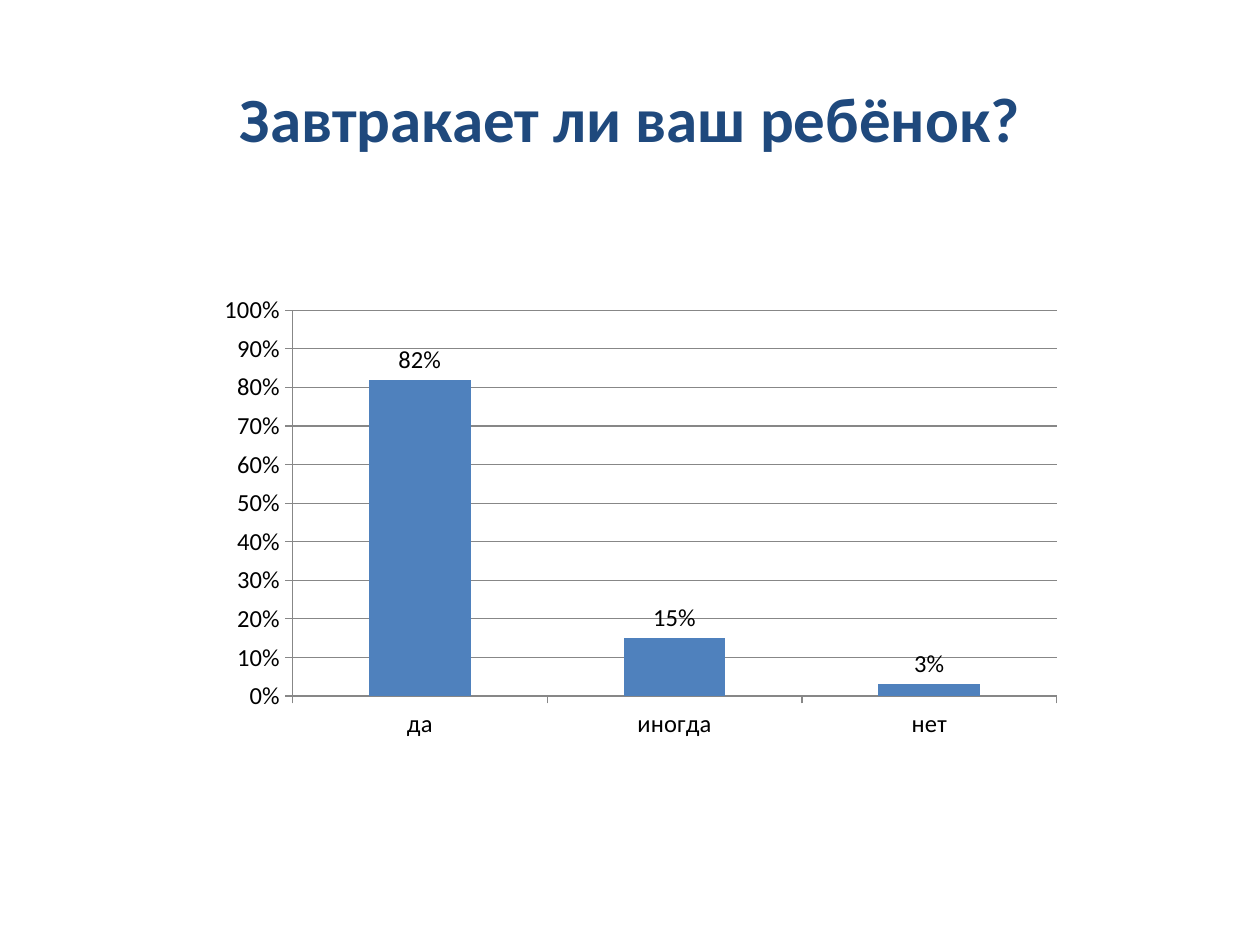
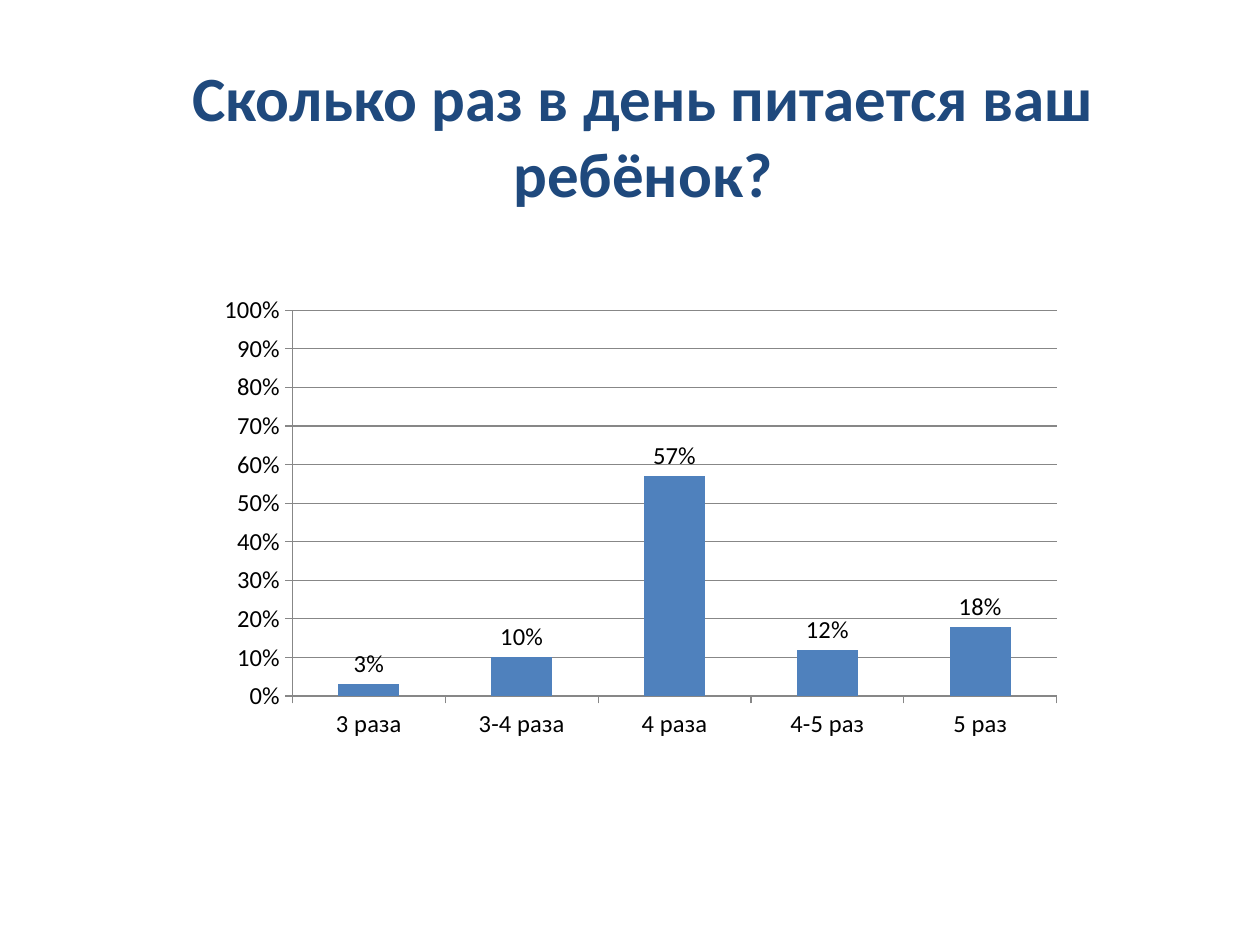
import pptx
import pptx.chart.data
import pptx.dml.color
import pptx.enum.chart
import pptx.enum.text
import pptx.util

HUES = {"title": "1F497D", "bar": "4F81BD", "line": "878787", "text": "000000"}
FACE = "Calibri"
WIDE, HIGH = 1260, 945
SCALE = 914400 / 126


def size(px):
    """Turn px into EMU."""
    return pptx.util.Emu(round(px * SCALE))


class Deck:
    """Hold the style and the current slide."""

    def __init__(self):
        """Start an empty deck."""
        self.file = pptx.Presentation()
        self.file.slide_width, self.file.slide_height = size(WIDE), size(HIGH)
        self.slide = None

    def hue(self, name):
        """Look up a colour."""
        return pptx.dml.color.RGBColor.from_string(HUES[name])

    def style(self, font, points, hue, bold=False):
        """Format a font."""
        font.name = FACE
        font.size = pptx.util.Pt(points)
        font.bold = bold
        font.color.rgb = self.hue(hue)

    def add(self):
        """Open a slide that has a title only."""
        self.slide = self.file.slides.add_slide(self.file.slide_layouts[5])

    def title(self, text, box):
        """Fill and place the title."""
        head = self.slide.shapes.title
        head.left, head.top, head.width, head.height = map(size, box)
        frame = head.text_frame
        frame.text = text
        frame.word_wrap = True
        frame.auto_size = pptx.enum.text.MSO_AUTO_SIZE.NONE
        frame.vertical_anchor = pptx.enum.text.MSO_ANCHOR.MIDDLE
        line = frame.paragraphs[0]
        line.alignment = pptx.enum.text.PP_ALIGN.CENTER
        self.style(line.font, 36, "title", True)

    def axis(self, axis):
        """Format what both axes share."""
        axis.major_tick_mark = pptx.enum.chart.XL_TICK_MARK.OUTSIDE
        axis.minor_tick_mark = pptx.enum.chart.XL_TICK_MARK.NONE
        axis.format.line.color.rgb = self.hue("line")
        axis.format.line.width = pptx.util.Pt(0.75)
        self.style(axis.tick_labels.font, 14, "text")

    def chart(self, shares, box):
        """Draw the shares as columns."""
        data = pptx.chart.data.CategoryChartData(number_format="0%")
        data.categories = list(shares)
        data.add_series("Series 1", list(shares.values()))
        kind = pptx.enum.chart.XL_CHART_TYPE.COLUMN_CLUSTERED
        chart = self.slide.shapes.add_chart(kind, *map(size, box), data).chart
        chart.has_legend = chart.has_title = False
        self.style(chart.font, 10, "text")

        self.axis(chart.category_axis)
        scale = chart.value_axis
        self.axis(scale)
        scale.minimum_scale, scale.maximum_scale = 0, 1
        scale.major_unit = 0.1
        scale.tick_labels.number_format = "0%"
        scale.tick_labels.number_format_is_linked = False
        scale.has_major_gridlines = True
        grid = scale.major_gridlines.format.line
        grid.color.rgb = self.hue("line")
        grid.width = pptx.util.Pt(0.75)

        plot = chart.plots[0]
        plot.gap_width = 150
        plot.vary_by_categories = False
        fill = plot.series[0].format.fill
        fill.solid()
        fill.fore_color.rgb = self.hue("bar")
        plot.has_data_labels = True
        tags = plot.data_labels
        tags.show_value = True
        tags.number_format = "0%"
        tags.number_format_is_linked = False
        tags.position = pptx.enum.chart.XL_LABEL_POSITION.OUTSIDE_END
        self.style(tags.font, 14, "text")


def main():
    """Build and save the slides."""
    polls = [
        ("Завтракает ли ваш ребёнок?", (63, 38, 1134, 158),
         {"да": 0.82, "иногда": 0.15, "нет": 0.03}),
        ("Сколько раз в день питается ваш ребёнок?", (59, 29, 1168, 211),
         {"3 раза": 0.03, "3-4 раза": 0.1, "4 раза": 0.57,
          "4-5 раз": 0.12, "5 раз": 0.18}),
    ]
    deck = Deck()
    for text, box, shares in polls:
        deck.add()
        deck.title(text, box)
        deck.chart(shares, (207, 286, 867, 462))
    deck.file.save("out.pptx")


if __name__ == "__main__":
    main()
